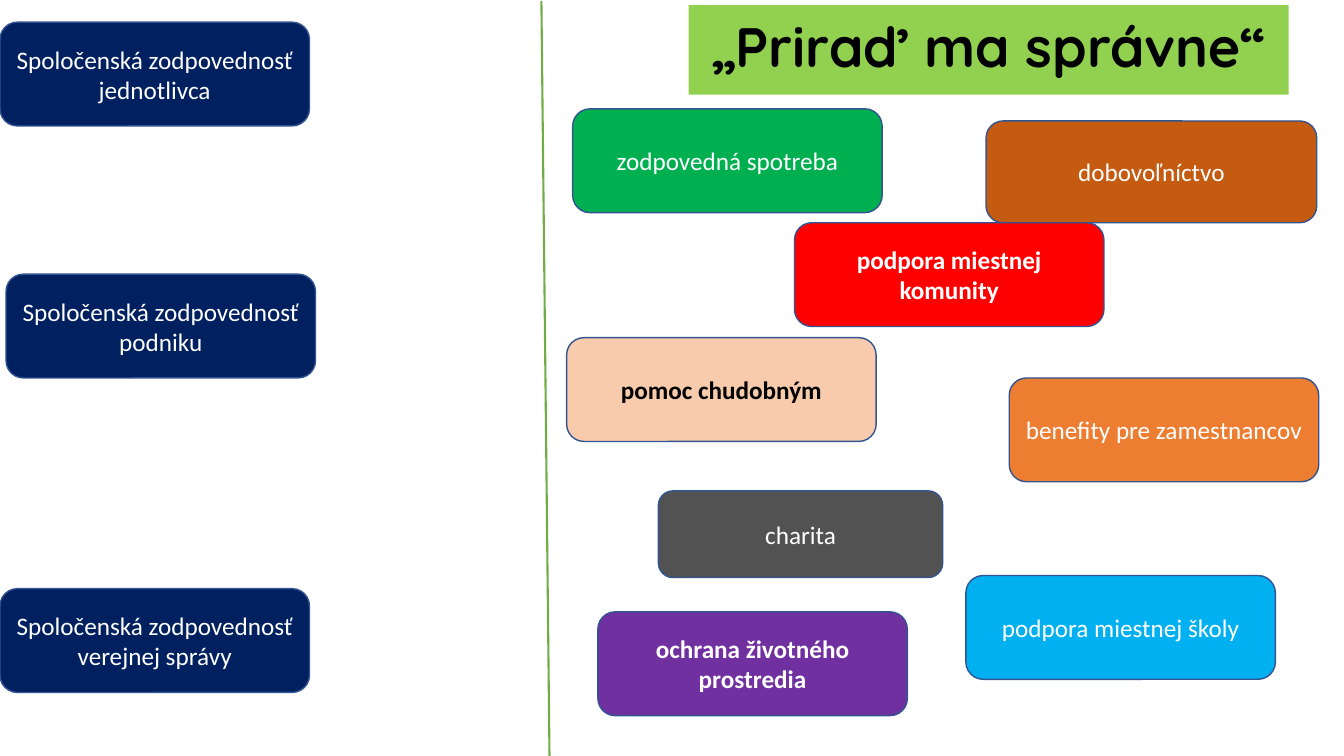
from dataclasses import dataclass

from pptx import Presentation
from pptx.dml.color import RGBColor
from pptx.enum.shapes import MSO_CONNECTOR, MSO_SHAPE
from pptx.enum.text import MSO_ANCHOR, PP_ALIGN
from pptx.oxml.ns import qn
from pptx.util import Pt
from lxml import etree

RECT = MSO_SHAPE.RECTANGLE
ROUNDED = MSO_SHAPE.ROUNDED_RECTANGLE
STRAIGHT = MSO_CONNECTOR.STRAIGHT
MIDDLE = MSO_ANCHOR.MIDDLE
CENTER = PP_ALIGN.CENTER
EMU_PER_PX = 9144
CARD_W, CARD_H = 307, 103


@dataclass(frozen=True)
class Theme:
    """Colours, fonts and type sizes of the slide."""
    title_font: str = "Quicksand"
    body_font: str = "Calibri"
    title_size: float = 39.6
    body_size: float = 18
    title_fill: str = "92D050"
    category: str = "002060"
    outline: str = "325491"
    divider: str = "70AD47"
    light: str = "FFFFFF"
    dark: str = "000000"
    brown: str = "C55A11"
    blue: str = "00B0F0"
    grey: str = "525252"
    green: str = "00B050"
    orange: str = "ED7D31"
    red: str = "FF0000"
    purple: str = "7030A0"
    peach: str = "F8CBAD"


THEME = Theme()


def px(n):
    """Turn whole pixels into EMU."""
    return n * EMU_PER_PX


def rgb(color):
    """Turn a hex string into a colour."""
    return RGBColor.from_string(color)


def add_box(s, kind, box, fill, text, font, size, color, bold):
    """Add a filled shape with one centred paragraph."""
    sp = s.shapes.add_shape(kind, *map(px, box))
    sp.shadow.inherit = False
    sp.fill.solid()
    sp.fill.fore_color.rgb = rgb(fill)
    tf = sp.text_frame
    tf.word_wrap = True
    tf.vertical_anchor = MIDDLE
    p = tf.paragraphs[0]
    p.text = text
    p.alignment = CENTER
    p.font.name = font
    p.font.size = Pt(size)
    p.font.bold = bold
    p.font.color.rgb = rgb(color)
    return sp


def add_title(s, text, box):
    """Add the title band."""
    sp = add_box(s, RECT, box, THEME.title_fill, text,
                 THEME.title_font, THEME.title_size, THEME.dark, True)
    sp.line.fill.background()
    sp.text_frame.paragraphs[0].line_spacing = 0.9


def add_card(s, text, left, top, fill, w=CARD_W, h=CARD_H, color=THEME.light, bold=False):
    """Add an outlined rounded card."""
    sp = add_box(s, ROUNDED, (left, top, w, h), fill, text,
                 THEME.body_font, THEME.body_size, color, bold)
    sp.line.color.rgb = rgb(THEME.outline)
    sp.line.width = Pt(1)


def add_divider(s, x1, y1, x2, y2):
    """Add the line between categories and answers."""
    line = s.shapes.add_connector(STRAIGHT, px(x1), px(y1), px(x2), px(y2))
    line.line.color.rgb = rgb(THEME.divider)
    line.line.width = Pt(1.5)
    etree.SubElement(line._element.spPr, qn("a:effectLst"))


def main():
    """Build the matching exercise slide."""
    prs = Presentation()
    prs.slide_width, prs.slide_height = px(1333), px(750)
    s = prs.slides.add_slide(prs.slide_layouts[6])

    add_title(s, "„Priraď ma správne“", (683, 5, 595, 89))
    for owner, left, top in (("jednotlivca", 0, 22), ("podniku", 6, 272),
                             ("verejnej správy", 0, 584)):
        add_card(s, f"Spoločenská zodpovednosť {owner}", left, top, THEME.category)
    add_divider(s, 537, 1, 545, 750)

    add_card(s, "dobovoľníctvo", 978, 120, THEME.brown, w=328, h=101)
    add_card(s, "podpora miestnej školy", 958, 571, THEME.blue)
    add_card(s, "charita", 653, 487, THEME.grey, w=282, h=86)
    add_card(s, "zodpovedná spotreba", 568, 108, THEME.green)
    add_card(s, "benefity pre zamestnancov", 1001, 375, THEME.orange)
    add_card(s, "podpora miestnej komunity", 788, 221, THEME.red, bold=True)
    add_card(s, "ochrana životného prostredia", 593, 607, THEME.purple, bold=True)
    add_card(s, "pomoc chudobným", 562, 335, THEME.peach, color=THEME.dark, bold=True)

    prs.save("out.pptx")


if __name__ == "__main__":
    main()
